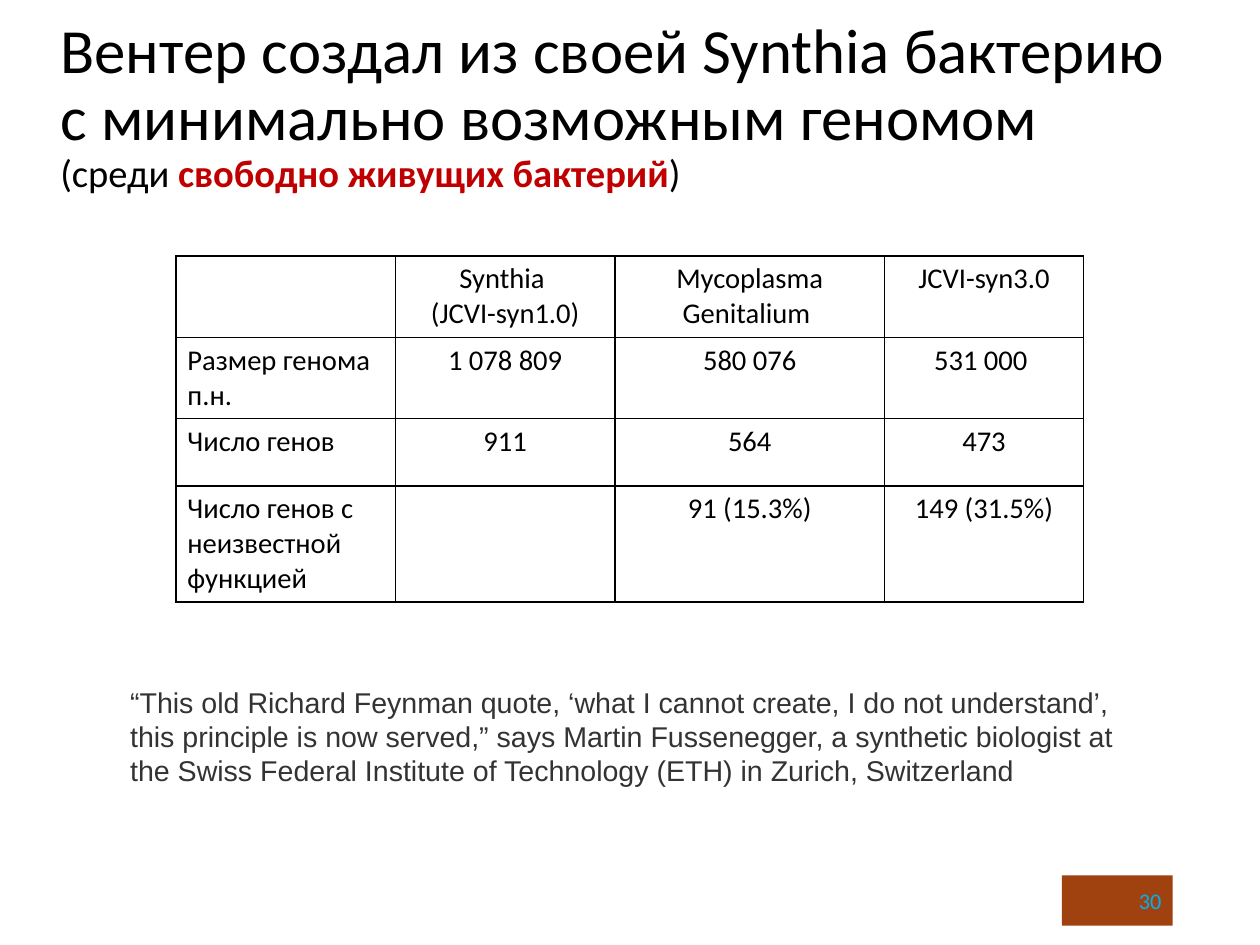
"""Build the slide comparing minimal bacterial genomes."""
from dataclasses import dataclass

import pptx
import pptx.dml.color
import pptx.enum.shapes
import pptx.enum.text
import pptx.oxml
import pptx.oxml.ns
import pptx.shapes.autoshape
import pptx.slide
import pptx.table
import pptx.text.text
import pptx.util

Inches = pptx.util.Inches
Align = pptx.enum.text.PP_ALIGN
Anchor = pptx.enum.text.MSO_ANCHOR

COLORS = {
    "text": "000000",
    "accent": "C00000",
    "quote": "333333",
    "number": "00B0F0",
    "badge": "A04210",
}
HEADING_FONT = "Calibri"
QUOTE_FONT = "Arial"
CM_PER_INCH = 2.54


@dataclass
class Span:
    text: str
    size: float
    color: str = "text"
    font: str = HEADING_FONT
    bold: bool = False


@dataclass
class Block:
    left: float
    top: float
    width: float
    height: float
    lines: list[list[Span]]
    anchor: Anchor = Anchor.TOP
    alignment: Align = Align.LEFT
    line_spacing: float = 1.0
    fill: str | None = None


BLOCKS = [
    Block(0.43, 0.14, 10.16, 1.6, [
        [Span("Вентер создал из своей Synthia бактерию с минимально возможным геномом ", 39.6)],
        [
            Span("(среди ", 24.3),
            Span("свободно живущих бактерий", 24.3, "accent", bold=True),
            Span(")", 24.3),
        ],
    ], anchor=Anchor.MIDDLE, line_spacing=0.9),
    Block(9.29, 7.66, 0.97, 0.44, [[Span("30", 14, "number")]],
          anchor=Anchor.MIDDLE, alignment=Align.RIGHT, fill="badge"),
    Block(1.04, 5.94, 8.94, 1.01, [[Span(
        "“This old Richard Feynman quote, ‘what I cannot create, I do not understand’, "
        "this principle is now served,” says Martin Fussenegger, a synthetic biologist at "
        "the Swiss Federal Institute of Technology (ETH) in Zurich, Switzerland",
        18, "quote", QUOTE_FONT)]]),
]

COLUMN_WIDTHS = [1.92, 1.92, 2.36, 1.74]
ROW_HEIGHT = 0.59
GENOMES = [
    ["", "Synthia \v(JCVI-syn1.0)", "Mycoplasma\nGenitalium ", "JCVI-syn3.0"],
    ["Размер генома п.н.", "1 078 809", "580 076", "531 000 "],
    ["Число генов", "911", "564", "473"],
    ["Число генов с неизвестной функцией", "", "91 (15.3%)", "149 (31.5%)"],
]


def rgb(name: str) -> pptx.dml.color.RGBColor:
    return pptx.dml.color.RGBColor.from_string(COLORS[name])


def style_font(font: pptx.text.text.Font, span: Span) -> None:
    font.name = span.font
    font.size = pptx.util.Pt(span.size)
    font.bold = span.bold
    font.color.rgb = rgb(span.color)


def add_block(page: pptx.slide.Slide, block: Block) -> None:
    bounds = [Inches(n) for n in (block.left, block.top, block.width, block.height)]
    if block.fill:
        box = page.shapes.add_shape(pptx.enum.shapes.MSO_SHAPE.RECTANGLE, *bounds)
        box.shadow.inherit = False
        box.fill.solid()
        box.fill.fore_color.rgb = rgb(block.fill)
        box.line.fill.background()
    else:
        box = page.shapes.add_textbox(*bounds)
    frame = box.text_frame
    frame.word_wrap = True
    frame.vertical_anchor = block.anchor
    para = frame.paragraphs[0]
    para.alignment = block.alignment
    para.line_spacing = block.line_spacing
    for index, line in enumerate(block.lines):
        if index:
            para.add_line_break()
        for span in line:
            run = para.add_run()
            run.text = span.text
            style_font(run.font, span)


def add_borders(cell: pptx.table._Cell) -> None:
    properties = cell._tc.get_or_add_tcPr()
    for index, side in enumerate("LRTB"):
        border = pptx.oxml.parse_xml(
            f'<a:ln{side} {pptx.oxml.ns.nsdecls("a")} w="{pptx.util.Pt(1)}">'
            f'<a:solidFill><a:srgbClr val="{COLORS["text"]}"/></a:solidFill></a:ln{side}>'
        )
        properties.insert(index, border)


def add_genome_table(page: pptx.slide.Slide) -> None:
    table = page.shapes.add_table(
        len(GENOMES), len(COLUMN_WIDTHS), Inches(1.54), Inches(2.24),
        Inches(sum(COLUMN_WIDTHS)), Inches(ROW_HEIGHT * len(GENOMES)),
    ).table
    table.first_row = table.horz_banding = False
    for column, width in zip(table.columns, COLUMN_WIDTHS):
        column.width = Inches(width)
    for row, values in zip(table.rows, GENOMES):
        row.height = Inches(ROW_HEIGHT)
        for index, (cell, value) in enumerate(zip(row.cells, values)):
            cell.fill.background()
            add_borders(cell)
            cell.text_frame.text = value
            for para in cell.text_frame.paragraphs:
                para.alignment = Align.CENTER if index else Align.LEFT
                for run in para.runs:
                    style_font(run.font, Span(run.text, 18))


def main() -> None:
    deck = pptx.Presentation()
    deck.slide_width = Inches(28 / CM_PER_INCH)
    deck.slide_height = Inches(21 / CM_PER_INCH)
    page = deck.slides.add_slide(deck.slide_layouts[6])
    add_genome_table(page)
    for block in BLOCKS:
        add_block(page, block)
    deck.save("out.pptx")


if __name__ == "__main__":
    main()
